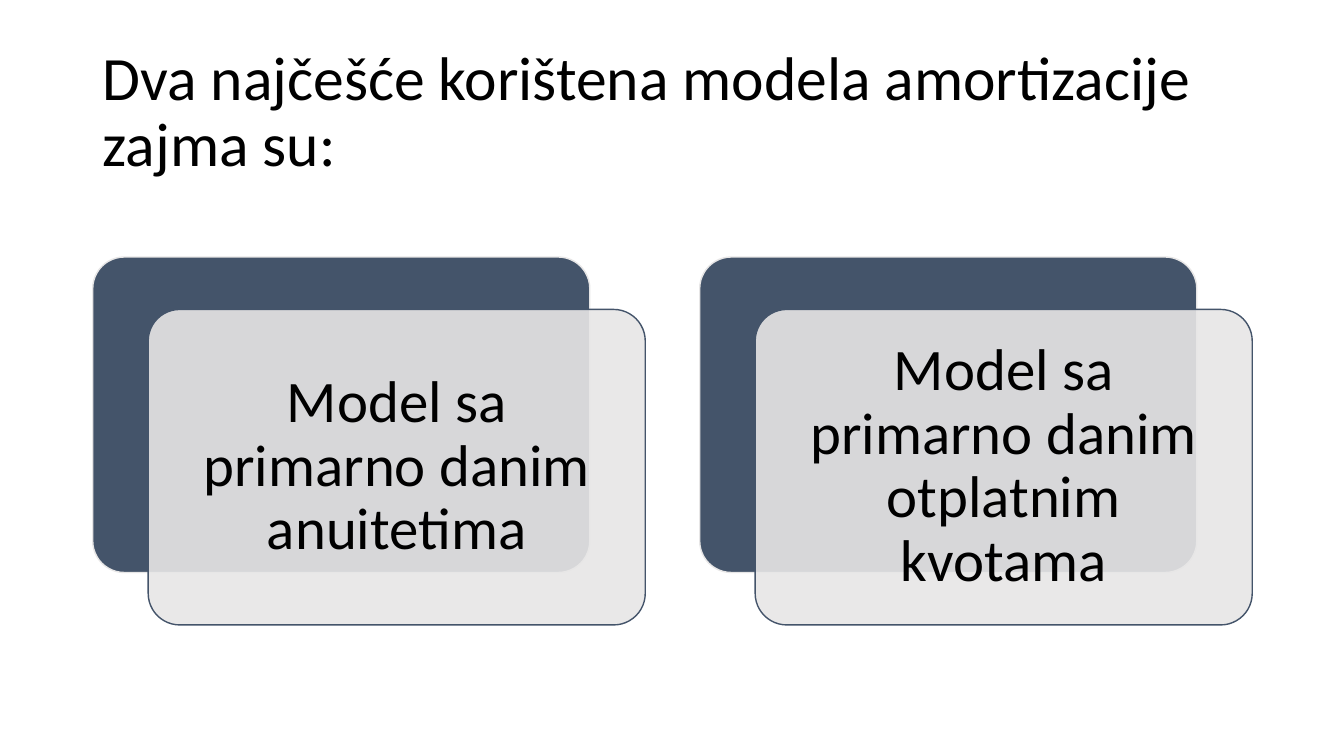
from lxml.etree import SubElement
from pptx import Presentation
from pptx.dml.color import RGBColor
from pptx.enum.shapes import MSO_SHAPE
from pptx.enum.text import MSO_ANCHOR, PP_ALIGN
from pptx.oxml.ns import qn
from pptx.util import Inches, Pt

FONT = "Calibri"
BLACK, NAVY, PALE = "000000", "44546A", "E7E6E6"
MODELS = ["Model sa primarno danim anuitetima",
          "Model sa primarno danim otplatnim kvotama"]
CARD_WIDTH, CARD_HEIGHT = 4.93, 3.13
CARD_PITCH = 6.02
OFFSET_X, OFFSET_Y = 0.55, 0.52


def color(hex_code):
    """Turn a hex string into a colour."""
    return RGBColor.from_string(hex_code)


def write_text(frame, text, size, align):
    """Write one vertically centred paragraph into a text frame."""
    frame.word_wrap = True
    frame.vertical_anchor = MSO_ANCHOR.MIDDLE
    paragraph = frame.paragraphs[0]
    paragraph.alignment = align
    paragraph.line_spacing = 0.9
    run = paragraph.add_run()
    run.text = text
    run.font.name = FONT
    run.font.size = Pt(size)
    run.font.color.rgb = color(BLACK)


def add_title(slide, left, top, width, height):
    """Place the slide heading in the given box."""
    heading = slide.shapes.add_textbox(
        Inches(left), Inches(top), Inches(width), Inches(height))
    write_text(heading.text_frame,
               "Dva najčešće korištena modela amortizacije zajma su:",
               44, PP_ALIGN.LEFT)


def add_panel(slide, left, top, fill, line):
    """Place one rounded panel and return it."""
    panel = slide.shapes.add_shape(
        MSO_SHAPE.ROUNDED_RECTANGLE, Inches(left), Inches(top),
        Inches(CARD_WIDTH), Inches(CARD_HEIGHT))
    panel.adjustments[0] = 0.1
    panel.shadow.inherit = False
    panel.fill.solid()
    panel.fill.fore_color.rgb = color(fill)
    panel.line.color.rgb = color(line)
    panel.line.width = Pt(1)
    return panel


def add_model_card(slide, left, top, model):
    """Place a dark panel with a translucent labelled panel over it."""
    add_panel(slide, left, top, NAVY, PALE)
    front = add_panel(slide, left + OFFSET_X, top + OFFSET_Y, PALE, NAVY)
    fill_color = front._element.spPr.find(qn("a:solidFill")).find(qn("a:srgbClr"))
    SubElement(fill_color, qn("a:alpha")).set("val", "90000")
    label = front.text_frame
    label.margin_left = label.margin_right = Inches(0.17)
    label.margin_top = label.margin_bottom = Inches(0.17)
    write_text(label, model, 42, PP_ALIGN.CENTER)


def main():
    """Build the slide and save it."""
    deck = Presentation()
    deck.slide_width, deck.slide_height = Inches(13.33), Inches(7.5)
    slide = deck.slides.add_slide(deck.slide_layouts[6])
    add_title(slide, 0.92, 0.4, 11.5, 1.45)
    for index, model in enumerate(MODELS):
        add_model_card(slide, 0.92 + index * CARD_PITCH, 2.55, model)
    deck.save("out.pptx")


if __name__ == "__main__":
    main()
